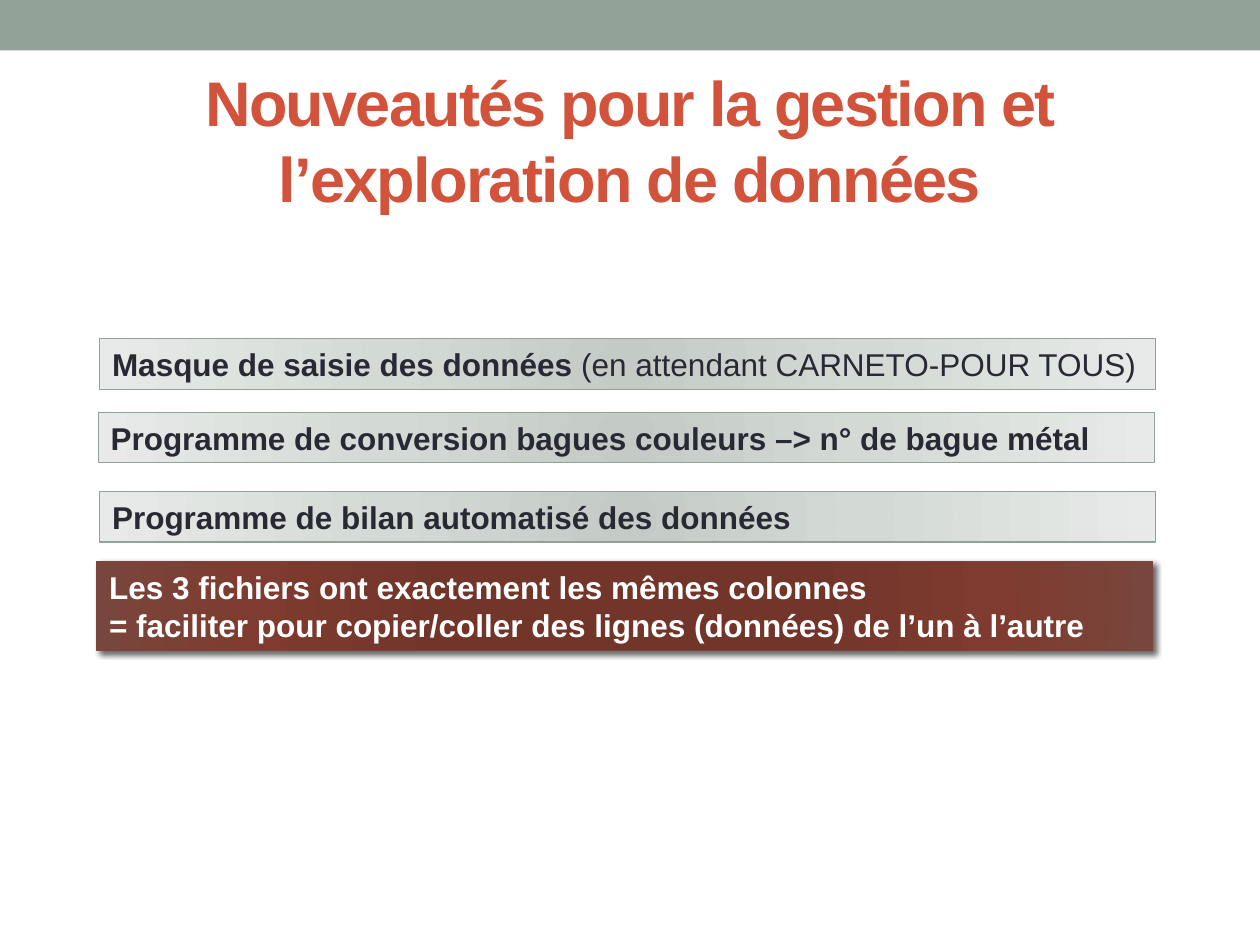
from dataclasses import dataclass

from lxml import etree
from pptx import Presentation
from pptx.dml.color import RGBColor
from pptx.enum.shapes import MSO_SHAPE
from pptx.enum.text import MSO_ANCHOR, MSO_AUTO_SIZE, PP_ALIGN
from pptx.oxml.ns import qn
from pptx.util import Cm, Pt

RECTANGLE = MSO_SHAPE.RECTANGLE
MIDDLE = MSO_ANCHOR.MIDDLE
FIT_SHAPE = MSO_AUTO_SIZE.SHAPE_TO_FIT_TEXT
LEFT, CENTER = PP_ALIGN.LEFT, PP_ALIGN.CENTER


@dataclass(frozen=True)
class Theme:
    font: str = "Arial"
    title_size: int = 36
    body_size: int = 18
    title: str = "D2533C"
    text: str = "292934"
    light_text: str = "FFFFFF"
    sage: str = "93A299"
    rust: str = "79463D"
    shadow: str = "000000"
    sage_stops: tuple = ((0, "C4CAC6"), (45, "D3DAD6"), (100, "E7EAE8"))
    rust_stops: tuple = ((0, "743327"), (34, "72352A"), (70, "7F3B2F"), (100, "79463D"))


class SlideBuilder:
    """Draws the elements of one slide in a shared theme."""

    def __init__(self, slide, theme):
        self.slide = slide
        self.theme = theme

    def _style(self, paragraph, size, color, align):
        paragraph.alignment = align
        font = paragraph.font
        font.name, font.size = self.theme.font, Pt(size)
        font.color.rgb = RGBColor.from_string(color)

    def _color(self, parent, color):
        return etree.SubElement(parent, qn("a:srgbClr"), val=color)

    def _radial_fill(self, panel, stops):
        panel.fill.gradient()
        gradient = panel._element.spPr.find(qn("a:gradFill"))
        for child in list(gradient):
            gradient.remove(child)
        stop_list = etree.SubElement(gradient, qn("a:gsLst"))
        for position, color in stops:
            stop = etree.SubElement(stop_list, qn("a:gs"), pos=str(position * 1000))
            self._color(stop, color)
        circle = etree.SubElement(gradient, qn("a:path"), path="circle")
        etree.SubElement(circle, qn("a:fillToRect"), dict.fromkeys("ltrb", "100000"))

    def _cast_shadow(self, panel):
        effects = panel._element.spPr.find(qn("a:effectLst"))
        shadow = etree.SubElement(
            effects, qn("a:outerShdw"), blurRad=str(Pt(3)), dist=str(Pt(2)),
            dir="2700000", algn="tl", rotWithShape="0")
        color = self._color(shadow, self.theme.shadow)
        etree.SubElement(color, qn("a:alpha"), val="60000")

    def _rectangle(self, left, top, width, height):
        rectangle = self.slide.shapes.add_shape(
            RECTANGLE, Cm(left), Cm(top), Cm(width), Cm(height))
        rectangle.shadow.inherit = False
        return rectangle

    def band(self, width, height):
        band = self._rectangle(0, 0, width, height)
        band.fill.solid()
        band.fill.fore_color.rgb = RGBColor.from_string(self.theme.sage)
        band.line.fill.background()

    def title(self, text, left, top, width, height):
        frame = self.slide.shapes.add_textbox(
            Cm(left), Cm(top), Cm(width), Cm(height)).text_frame
        frame.word_wrap = True
        frame.vertical_anchor = MIDDLE
        heading = frame.paragraphs[0]
        self._style(heading, self.theme.title_size, self.theme.title, CENTER)
        heading.font.bold = True
        run = heading.add_run()
        run.text = text
        run._r.get_or_add_rPr().set("spc", "-100")

    def panel(self, lines, left, top, width, height, stops, border, color, raised=False):
        panel = self._rectangle(left, top, width, height)
        self._radial_fill(panel, stops)
        panel.line.color.rgb = RGBColor.from_string(border)
        panel.line.width = Pt(0.75)
        if raised:
            self._cast_shadow(panel)
        frame = panel.text_frame
        frame.word_wrap = True
        frame.auto_size = FIT_SHAPE
        for index, (strong, plain) in enumerate(lines):
            paragraph = frame.add_paragraph() if index else frame.paragraphs[0]
            self._style(paragraph, self.theme.body_size, color, LEFT)
            for text, bold in ((strong, True), (plain, False)):
                if text:
                    run = paragraph.add_run()
                    run.text, run.font.bold = text, bold


def main():
    theme = Theme()
    presentation = Presentation()
    presentation.slide_width, presentation.slide_height = Cm(25.4), Cm(19.05)
    slide = presentation.slides.add_slide(presentation.slide_layouts[6])
    builder = SlideBuilder(slide, theme)

    builder.band(25.4, 1.02)
    builder.title("Nouveautés pour la gestion et l’exploration de données",
                  1.27, 1.73, 22.86, 2.16)

    panel_width = 21.29
    tools = (
        (2.01, 6.83, "Masque de saisie des données ", "(en attendant CARNETO-POUR TOUS)"),
        (1.98, 8.31, "Programme de conversion bagues couleurs –> n° de bague métal", ""),
        (2.01, 9.91, "Programme de bilan automatisé des données", ""),
    )
    for left, top, name, remark in tools:
        builder.panel([(name, remark)], left, top, panel_width, 1.02,
                      theme.sage_stops, theme.sage, theme.text)

    benefit = (
        ("Les 3 fichiers ont exactement les mêmes colonnes", ""),
        ("= faciliter pour copier/coller des lignes (données) de l’un à l’autre", ""),
    )
    builder.panel(benefit, 1.95, 11.32, panel_width, 1.8,
                  theme.rust_stops, theme.rust, theme.light_text, raised=True)

    presentation.save("out.pptx")


if __name__ == "__main__":
    main()
